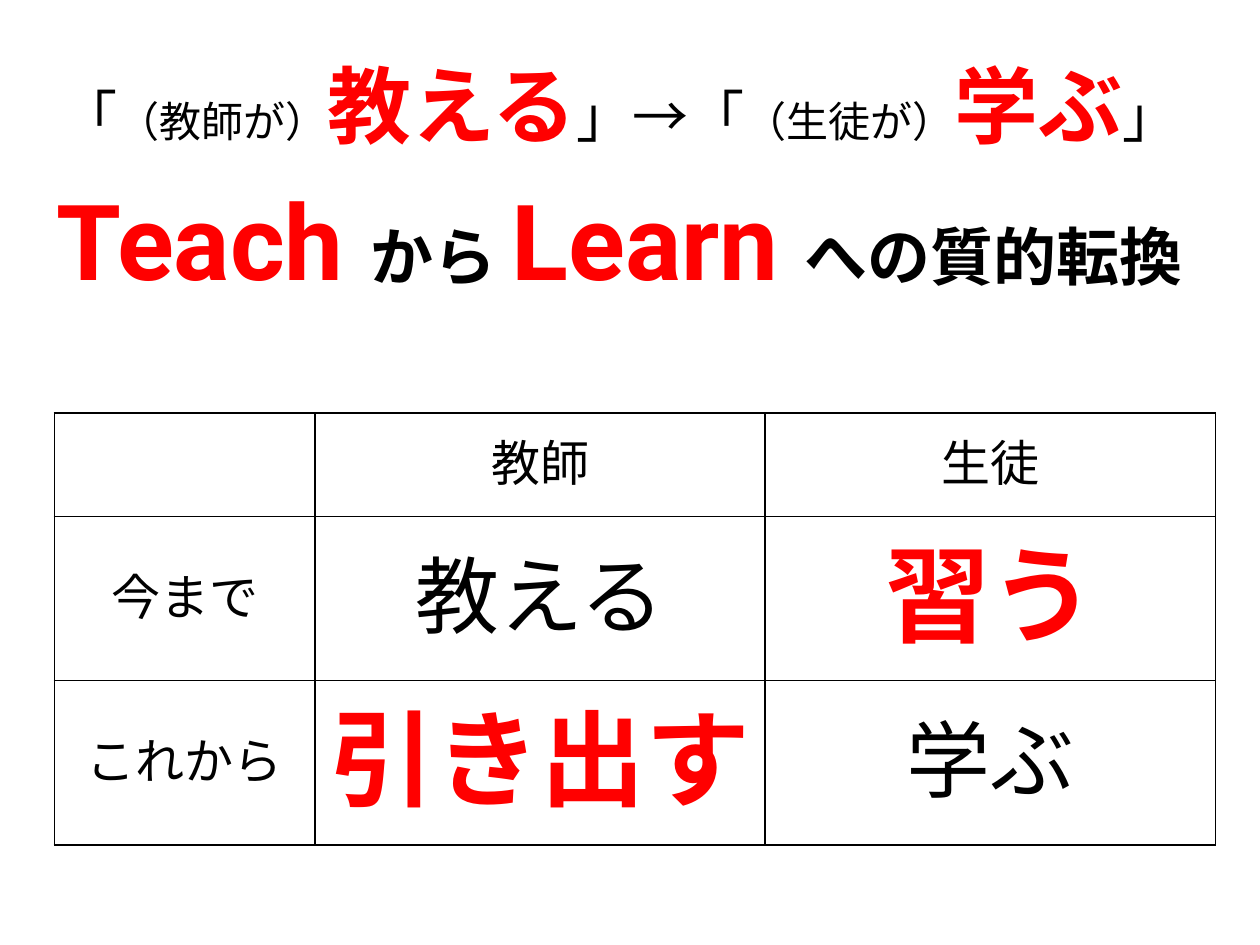
from dataclasses import dataclass

from lxml.etree import SubElement
from pptx import Presentation
from pptx.dml.color import RGBColor
from pptx.enum.lang import MSO_LANGUAGE_ID
from pptx.enum.text import MSO_ANCHOR, PP_ALIGN
from pptx.oxml.ns import qn
from pptx.util import Pt


@dataclass(frozen=True)
class Theme:
    font: str = "Roboto"
    ink: str = "000000"
    red: str = "FF0000"
    small: int = 24
    label: int = 28
    mark: int = 32
    join: int = 36
    verb: int = 48
    key: int = 60
    rule: float = 1
    lead: float = 0.2


@dataclass(frozen=True)
class Span:
    text: str
    size: int
    red: bool = False
    bold: bool = False


THEME = Theme()

TITLE = [
    [
        Span("「", THEME.mark),
        Span("（教師が）", THEME.small),
        Span("教える", THEME.verb, True, True),
        Span("」→「", THEME.mark),
        Span("（生徒が）", THEME.small),
        Span("学ぶ", THEME.verb, True, True),
        Span("」", THEME.mark),
    ],
    [
        Span("Teach ", THEME.key, True, True),
        Span("から ", THEME.join, bold=True),
        Span("Learn ", THEME.key, True, True),
        Span("への質的転換", THEME.join, bold=True),
    ],
]

GRID = [
    [None, Span("教師", THEME.label), Span("生徒", THEME.label)],
    [
        Span("今まで", THEME.label),
        Span("教える", THEME.verb),
        Span("習う", THEME.key, True, True),
    ],
    [
        Span("これから", THEME.label),
        Span("引き出す", THEME.key, True, True),
        Span("学ぶ", THEME.verb),
    ],
]
COLS = [149, 257.3, 257.3]
ROWS = [59, 94, 94]


def write(para, spans: list[Span]) -> None:
    para.alignment = PP_ALIGN.CENTER
    for span in spans:
        run = para.add_run()
        run.text = span.text
        font = run.font
        font.name = THEME.font
        font.size = Pt(span.size)
        font.bold = span.bold
        font.color.rgb = RGBColor.from_string(THEME.red if span.red else THEME.ink)
        font.language_id = MSO_LANGUAGE_ID.JAPANESE
        SubElement(run._r.get_or_add_rPr(), qn("a:ea"), typeface=THEME.font)


def border(cell) -> None:
    """Rule all four sides; the lines must come before the cell's fill."""
    props = cell._tc.get_or_add_tcPr()
    for spot, side in enumerate(("lnL", "lnR", "lnT", "lnB")):
        line = SubElement(props, qn(f"a:{side}"), w=str(Pt(THEME.rule)))
        fill = SubElement(line, qn("a:solidFill"))
        SubElement(fill, qn("a:srgbClr"), val=THEME.ink)
        props.insert(spot, line)


def add_title(slide) -> None:
    box = slide.shapes.add_textbox(Pt(-11.5), Pt(27), Pt(731.5), Pt(158.4))
    frame = box.text_frame
    frame.word_wrap = True
    for index, spans in enumerate(TITLE):
        para = frame.add_paragraph() if index else frame.paragraphs[0]
        para.space_before = Pt(THEME.lead * THEME.key if index else 0)
        write(para, spans)


def add_grid(slide) -> None:
    table = slide.shapes.add_table(
        len(ROWS), len(COLS), Pt(31), Pt(236), Pt(sum(COLS)), Pt(sum(ROWS))
    ).table
    table.first_row = table.horz_banding = False
    for col, width in zip(table.columns, COLS):
        col.width = Pt(width)
    for row, height, spans in zip(table.rows, ROWS, GRID):
        row.height = Pt(height)
        for cell, span in zip(row.cells, spans):
            cell.fill.background()
            cell.vertical_anchor = MSO_ANCHOR.MIDDLE
            border(cell)
            if span:
                para = cell.text_frame.paragraphs[0]
                para.space_before = Pt(THEME.lead * span.size)
                write(para, [span])


def main() -> None:
    deck = Presentation()
    deck.slide_width, deck.slide_height = Pt(720), Pt(540)
    slide = deck.slides.add_slide(deck.slide_layouts[6])
    add_title(slide)
    add_grid(slide)
    deck.save("out.pptx")


if __name__ == "__main__":
    main()
